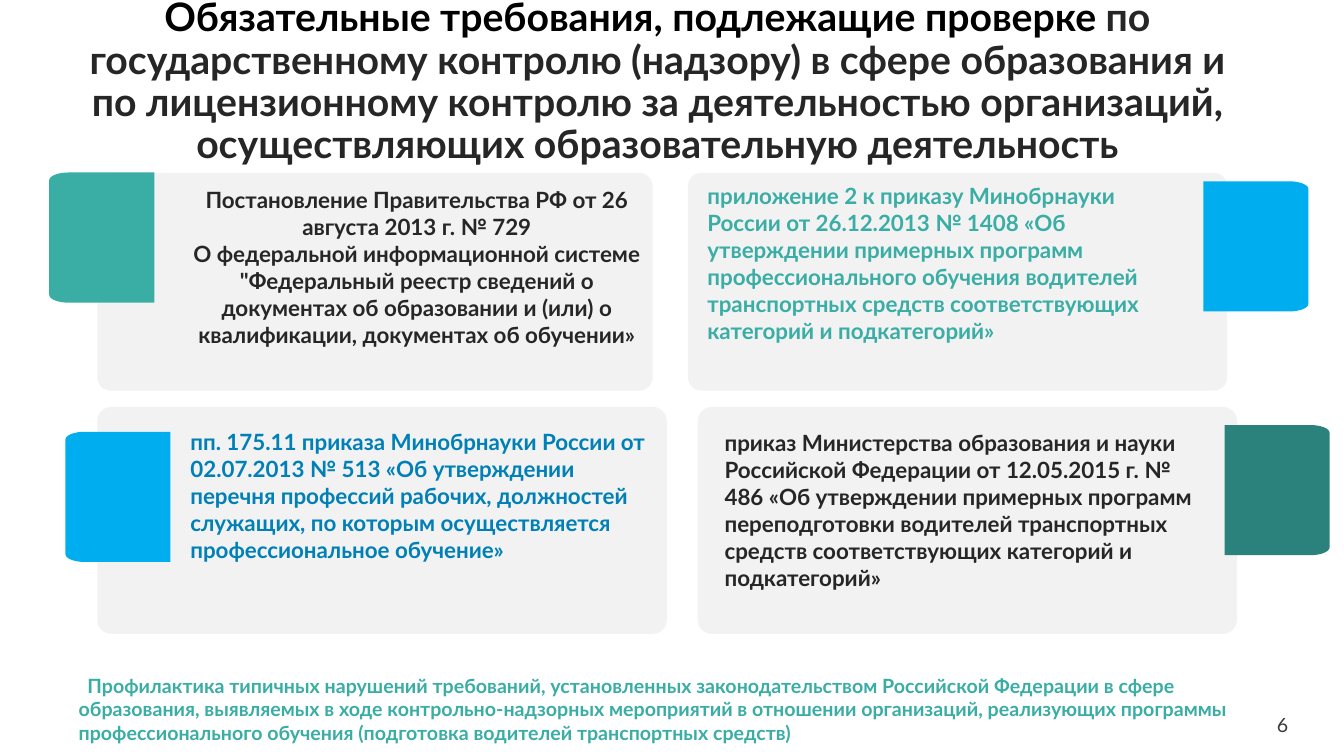
import math

import pptx
import pptx.dml.color
import pptx.enum.shapes
import pptx.enum.text
import pptx.util

Pt = pptx.util.Pt
RGBColor = pptx.dml.color.RGBColor
Align = pptx.enum.text.PP_ALIGN
Anchor = pptx.enum.text.MSO_ANCHOR

FONT = "Lato"
BLACK = RGBColor(0x00, 0x00, 0x00)
DARK = RGBColor(0x26, 0x26, 0x26)
NUMBER_GRAY = RGBColor(0x3C, 0x3C, 0x3C)
PANEL_GRAY = RGBColor(0xF2, 0xF2, 0xF2)
TEAL = RGBColor(0x3A, 0xAD, 0xA5)
DARK_TEAL = RGBColor(0x2B, 0x82, 0x7C)
SKY = RGBColor(0x00, 0xAD, 0xEE)
BLUE = RGBColor(0x00, 0x80, 0xB6)

TAB_WIDTH, TAB_HEIGHT = 75, 93
CORNER_WIDTH, CORNER_HEIGHT = 14, 5.5
CORNER_STEPS = 8

TITLE_RUNS = [
    ("Обязательные требования, подлежащие проверке ", BLACK),
    ("по государственному контролю (надзору) в сфере образования и по лицензионному "
     "контролю за деятельностью организаций, осуществляющих образовательную деятельность", DARK),
]
FOOTER = ("Профилактика типичных нарушений требований, установленных законодательством "
          "Российской Федерации в сфере образования, выявляемых в ходе контрольно-надзорных "
          "мероприятий в отношении организаций, реализующих программы профессионального "
          "обучения (подготовка водителей транспортных средств)")

CARDS = [
    {"panel": (69.5, 123.5, 396.7, 155.5), "tab": (35.2, 123.2), "side": "left", "tab_color": TEAL,
     "text_box": (128.9, 129.6, 337.7, 123.8), "text_color": DARK, "alignment": Align.CENTER,
     "texts": ["Постановление Правительства РФ от 26 августа 2013 г. № 729",
               "О федеральной информационной системе \"Федеральный реестр сведений о документах "
               "об образовании и (или) о квалификации, документах об обучении»"]},
    {"panel": (491.4, 123.5, 385.2, 155.5), "tab": (859.6, 129.5), "side": "right", "tab_color": SKY,
     "text_box": (498.2, 126.7, 337.7, 123.8), "text_color": TEAL, "alignment": Align.LEFT,
     "texts": ["приложение 2 к приказу Минобрнауки России от 26.12.2013 № 1408 «Об утверждении "
               "примерных программ профессионального обучения водителей транспортных средств "
               "соответствующих категорий и подкатегорий»"]},
    {"panel": (69.5, 290.7, 406.8, 162), "tab": (46.8, 308.4), "side": "left", "tab_color": SKY,
     "text_box": (128.9, 302.4, 349.2, 123.8), "text_color": BLUE, "alignment": Align.LEFT,
     "texts": ["пп. 175.11 приказа Минобрнауки России от 02.07.2013 № 513 «Об утверждении перечня "
               "профессий рабочих, должностей служащих, по которым осуществляется "
               "профессиональное обучение»"]},
    {"panel": (498.4, 290.7, 385.2, 162), "tab": (874.7, 303.6), "side": "right", "tab_color": DARK_TEAL,
     "text_box": (510.5, 303.1, 361.4, 104.4), "text_color": DARK, "alignment": Align.LEFT,
     "texts": ["приказ Министерства образования и науки Российской Федерации от 12.05.2015 г. № 486 "
               "«Об утверждении примерных программ переподготовки водителей транспортных средств "
               "соответствующих категорий и подкатегорий»"]},
]


def add_run(paragraph, text, size, color, bold=True):
    """Append one formatted run to a paragraph."""
    run = paragraph.add_run()
    run.text = text
    run.font.name = FONT
    run.font.size = Pt(size)
    run.font.bold = bold
    run.font.color.rgb = color


def paint(shape, color):
    """Give a shape a flat fill with no line or shadow."""
    shape.shadow.inherit = False
    shape.fill.solid()
    shape.fill.fore_color.rgb = color
    shape.line.fill.background()


def add_text_box(slide, box, texts, size, color, alignment, bold=True, inset=True):
    """Add a wrapped text box with one paragraph per text and return its frame."""
    frame = slide.shapes.add_textbox(*map(Pt, box)).text_frame
    frame.word_wrap = True
    if not inset:
        frame.margin_left = frame.margin_top = frame.margin_right = frame.margin_bottom = 0
    for index, text in enumerate(texts):
        paragraph = frame.add_paragraph() if index else frame.paragraphs[0]
        paragraph.alignment = alignment
        add_run(paragraph, text, size, color, bold)
    return frame


def add_tab(slide, corner, side, color):
    """Draw a tab whose outer side, left or right, has rounded corners."""
    left, top = corner
    angles = [math.pi / 2 * step / CORNER_STEPS for step in range(CORNER_STEPS + 1)]
    upper = [(CORNER_WIDTH * (1 - math.cos(angle)), CORNER_HEIGHT * (1 - math.sin(angle)))
             for angle in angles]
    lower = [(x, TAB_HEIGHT - y) for x, y in reversed(upper)]
    outline = upper + [(TAB_WIDTH, 0), (TAB_WIDTH, TAB_HEIGHT)] + lower
    if side == "right":
        outline = [(TAB_WIDTH - x, y) for x, y in outline]
    points = [(Pt(left + x), Pt(top + y)) for x, y in outline]
    builder = slide.shapes.build_freeform(*points[0], scale=1.0)
    builder.add_line_segments(points[1:], close=True)
    paint(builder.convert_to_shape(), color)


def add_card(slide, card):
    """Add one gray panel with its coloured tab and text."""
    panel = slide.shapes.add_shape(
        pptx.enum.shapes.MSO_SHAPE.ROUNDED_RECTANGLE, *map(Pt, card["panel"]))
    panel.adjustments[0] = 0.061
    paint(panel, PANEL_GRAY)
    add_tab(slide, card["tab"], card["side"], card["tab_color"])
    add_text_box(slide, card["text_box"], card["texts"], 16, card["text_color"], card["alignment"])


def add_title(slide, box):
    """Place and fill the title placeholder."""
    title = slide.shapes.title
    title.left, title.top, title.width, title.height = map(Pt, box)
    frame = title.text_frame
    frame.word_wrap = True
    frame.auto_size = pptx.enum.text.MSO_AUTO_SIZE.NONE
    frame.vertical_anchor = Anchor.MIDDLE
    paragraph = frame.paragraphs[0]
    paragraph.alignment = Align.CENTER
    paragraph.line_spacing = 0.9
    for text, color in TITLE_RUNS:
        add_run(paragraph, text, 28, color)


def add_footer(slide, note_box, number_box):
    """Add the closing note and the slide number."""
    note = add_text_box(slide, note_box, [FOOTER], 14, TEAL, Align.LEFT, inset=False)
    note.paragraphs[0]._p.get_or_add_pPr().set("indent", str(Pt(6.3)))
    number = add_text_box(slide, number_box, ["6"], 14, NUMBER_GRAY, Align.RIGHT,
                          bold=False, inset=False)
    number.vertical_anchor = Anchor.MIDDLE


def main():
    """Build the slide and save the presentation."""
    presentation = pptx.Presentation()
    presentation.slide_width, presentation.slide_height = Pt(960), Pt(540)
    slide = presentation.slides.add_slide(presentation.slide_layouts[5])
    add_title(slide, (41.8, 31.7, 855.4, 54.7))
    for card in CARDS:
        add_card(slide, card)
    add_footer(slide, (56.2, 481, 861.8, 51.1), (902.2, 509, 18, 17.3))
    presentation.save("out.pptx")


if __name__ == "__main__":
    main()
